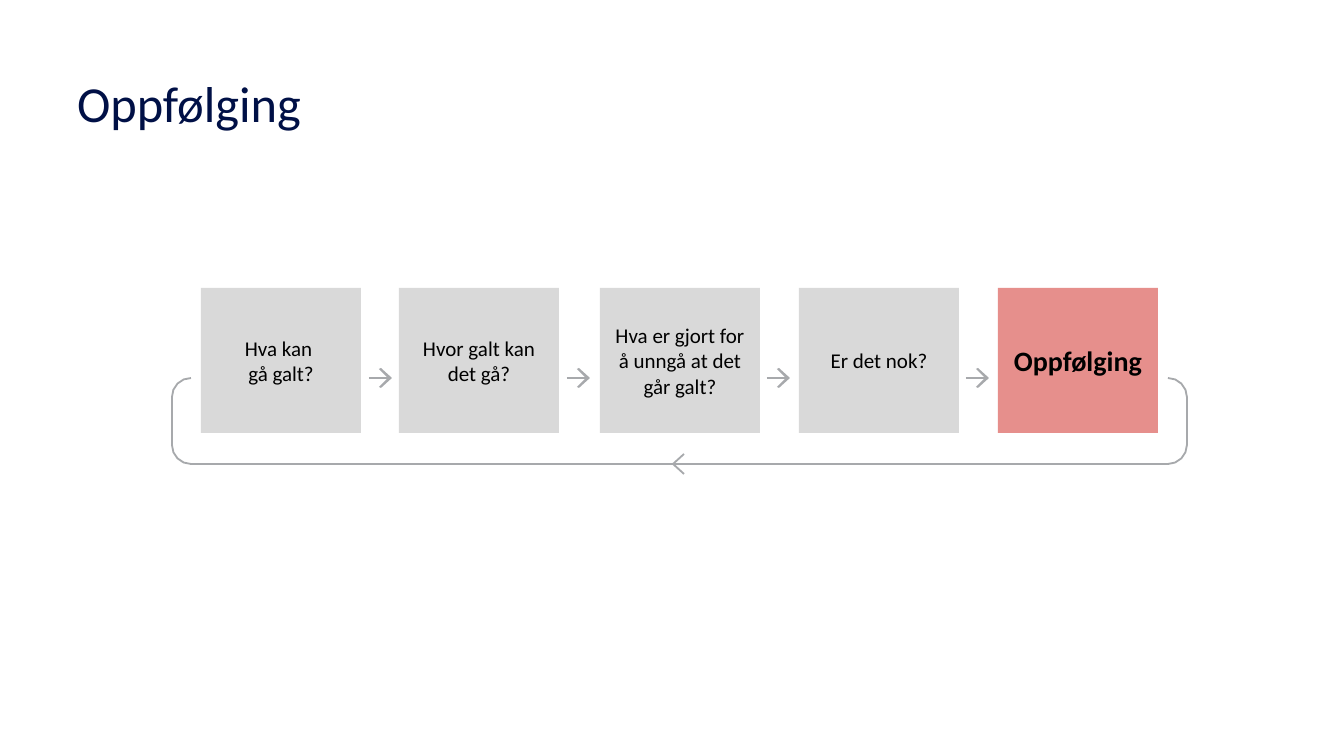
from math import cos, sin, radians
from lxml.etree import SubElement
from pptx import Presentation
from pptx.dml.color import RGBColor as RGB
from pptx.enum.shapes import MSO_CONNECTOR as Conn, MSO_SHAPE as Shape
from pptx.enum.text import MSO_ANCHOR as Anchor, PP_ALIGN as Align
from pptx.oxml.ns import qn
from pptx.util import Pt

PX = 914400 / 100.8
FONT = "Calibri"
NAVY = RGB(0x00, 0x10, 0x46)
BLACK = RGB(0, 0, 0)
ARROW = RGB(0xA7, 0xA9, 0xAC)
GREY = RGB(0xD9, 0xD9, 0xD9)
RED = RGB(0xE6, 0x8F, 0x8C)

TOP, WIDTH, HEIGHT = 288, 160, 145
MID = 378
STEPS = [
    (201, ["Hva kan ", "gå galt?"]),
    (399, ["Hvor galt kan det gå?"]),
    (600, ["Hva er gjort for å unngå at det går galt?"]),
    (799, ["Er det nok?"]),
    (998, ["Oppfølging"]),
]
SHAFTS = [369, 567, 767, 966]
HEAD = [(12, -10), (10, -9), (19, 0), (10, 9), (12, 10), (23, 0)]


def emu(*vals):
    return [round(v * PX) for v in vals]


def set_font(para, size, color, bold=False):
    font = para.font
    font.name, font.size, font.bold = FONT, Pt(size), bold
    font.color.rgb = color


def add_title(slide, text):
    title = slide.shapes.title
    title.left, title.top, title.width, title.height = emu(67, 40, 1210, 125)
    frame = title.text_frame
    frame.text = text
    frame.vertical_anchor = Anchor.MIDDLE
    para = frame.paragraphs[0]
    para.alignment = Align.LEFT
    set_font(para, 36, NAVY)


def add_box(slide, left, lines, last):
    box = slide.shapes.add_shape(Shape.RECTANGLE, *emu(left, TOP, WIDTH, HEIGHT))
    box.shadow.inherit = False
    box.fill.solid()
    box.fill.fore_color.rgb = RED if last else GREY
    box.line.fill.background()
    frame = box.text_frame
    frame.word_wrap = True
    frame.vertical_anchor = Anchor.MIDDLE
    frame.text = "\n".join(lines)
    for para in frame.paragraphs:
        para.alignment = Align.CENTER
        set_font(para, 20 if last else 15, BLACK, last)


def add_path(slide, points, filled=False):
    """Draw a filled outline, or an open line."""
    first, *rest = [emu(*point) for point in points]
    path = slide.shapes.build_freeform(*first)
    path.add_line_segments(rest, close=filled)
    shape = path.convert_to_shape()
    shape.shadow.inherit = False
    if filled:
        shape.fill.solid()
        shape.fill.fore_color.rgb = ARROW
        shape.line.fill.background()
    else:
        shape.fill.background()
        shape.line.color.rgb = ARROW
        shape.line.width = Pt(1.31)


def add_arrow(slide, left):
    shaft = slide.shapes.add_connector(
        Conn.STRAIGHT, *emu(left, MID, left + 20, MID))
    shaft.line.color.rgb = ARROW
    shaft.line.width = Pt(1.19)
    SubElement(shaft._element.spPr, qn("a:effectLst"))
    add_path(slide, [(left + x, MID + y) for x, y in HEAD], filled=True)


def add_loop(slide):
    """Draw the line that leads back from the last step to the first."""
    left, right, low, radius = 172, 1187, 464, 19
    near, far = left + radius, right - radius
    top, base = MID + radius, low - radius
    turns = [(far, top, -90), (far, base, 0), (near, base, 90), (near, top, 180)]
    points = []
    for x, y, start in turns:
        for step in range(5):
            angle = radians(start + step * 22.5)
            points.append((x + radius * cos(angle), y + radius * sin(angle)))
    add_path(slide, points)
    add_path(slide, [(684, low + 10), (673, low), (684, low - 10)])


def main():
    prs = Presentation()
    prs.slide_width, prs.slide_height = emu(1344, 756)
    slide = prs.slides.add_slide(prs.slide_layouts[5])
    add_title(slide, "Oppfølging")
    add_loop(slide)
    for left in SHAFTS:
        add_arrow(slide, left)
    for left, lines in STEPS:
        add_box(slide, left, lines, left == STEPS[-1][0])
    prs.save("out.pptx")


if __name__ == "__main__":
    main()
